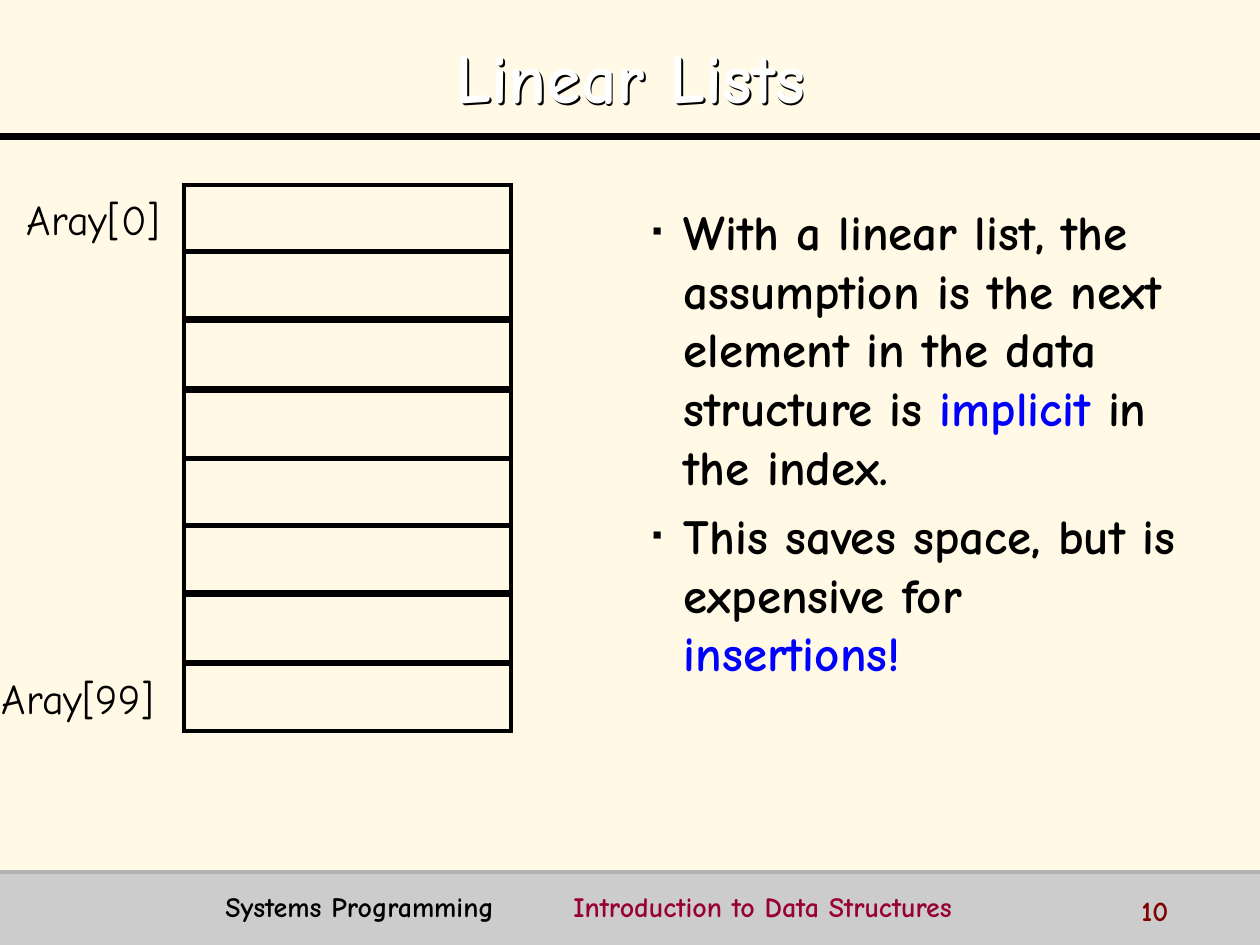
from lxml import etree
from pptx import Presentation
from pptx.dml.color import RGBColor as RGB
from pptx.enum.shapes import MSO_CONNECTOR as CONN, MSO_SHAPE as SHAPE
from pptx.enum.text import MSO_ANCHOR as ANCHOR, PP_ALIGN as ALIGN
from pptx.oxml import parse_xml
from pptx.oxml.ns import nsdecls, qn
from pptx.util import Pt

PX = 914400 / 126
FONT = "Comic Neue"
C = {"bg": "FFF9E6", "bar": "CCCCCC", "edge": "B2B2B2", "black": "000000",
     "white": "FFFFFF", "blue": "0000FF", "topic": "990033", "page": "800000"}


def px(*values):
    return [round(v * PX) for v in values]


def add_text(box, paragraphs, size, frame={}, para={}, bold=True):
    sp = s.shapes.add_textbox(*px(*box))
    tf = sp.text_frame
    for key, value in {"word_wrap": True, **frame}.items():
        setattr(tf, key, value)
    for i, runs in enumerate(paragraphs):
        p = tf.add_paragraph() if i else tf.paragraphs[0]
        for key, value in para.items():
            setattr(p, key, value)
        for text, color in runs:
            r = p.add_run()
            r.text = text
            for key, value in {"name": FONT, "size": Pt(size), "bold": bold}.items():
                setattr(r.font, key, value)
            r.font.color.rgb = RGB.from_string(C[color])
    return sp


prs = Presentation()
prs.slide_width, prs.slide_height = px(1260, 945)
s = prs.slides.add_slide(prs.slide_layouts[6])
s.background.fill.solid()
s.background.fill.fore_color.rgb = RGB.from_string(C["bg"])

bar = s.shapes.add_shape(SHAPE.RECTANGLE, *px(0, 872, 1260, 73))
bar.shadow.inherit = False
bar.fill.solid()
bar.fill.fore_color.rgb = RGB.from_string(C["bar"])
bar.line.fill.background()

for y, color, width in [(137, "black", 4), (872, "edge", 2)]:
    rule = s.shapes.add_connector(CONN.STRAIGHT, *px(0, y, 1260, y))
    rule.line.color.rgb = RGB.from_string(C[color])
    rule.line.width = Pt(width)
    etree.SubElement(rule._element.spPr, qn("a:effectLst"))

title = add_text((25, 16, 1211, 110), [[("Linear Lists", "white")]], 40,
                 {"vertical_anchor": ANCHOR.MIDDLE},
                 {"alignment": ALIGN.CENTER, "line_spacing": 1.1})
title._element.spPr.append(parse_xml(
    f'<a:effectLst {nsdecls("a")}><a:outerShdw dist="20320" dir="2700000" algn="tl">'
    f'<a:srgbClr val="{C["black"]}"/></a:outerShdw></a:effectLst>'))

tf = add_text((640, 195, 557, 662), [
    [("With a linear list, the assumption is the next element in the data structure is ", "black"),
     ("implicit ", "blue"), ("in the index.", "black")],
    [("This saves space, but is expensive for ", "black"), ("insertions!", "blue")]], 28).text_frame
tf.paragraphs[1].space_before = Pt(5.6)
bullet = {"buClr": {}, "buSzPct": {"val": "50000"},
          "buFont": {"typeface": FONT}, "buChar": {"char": "▪"}}
for p in tf.paragraphs:
    pPr = p._p.get_or_add_pPr()
    pPr.set("marL", "228600")
    pPr.set("indent", "-228600")
    for tag, attrs in bullet.items():
        etree.SubElement(pPr, qn(f"a:{tag}"), attrs)
    etree.SubElement(pPr.find(qn("a:buClr")), qn("a:srgbClr"), {"val": C["black"]})

tops = [185, 251, 321, 391, 459, 525, 595, 664]
for y in tops:
    cell = s.shapes.add_shape(SHAPE.RECTANGLE, *px(184, y, 327, 67))
    cell.shadow.inherit = False
    cell.fill.background()
    cell.line.color.rgb = RGB.from_string(C["black"])
    cell.line.width = Pt(2)
    etree.SubElement(cell._element.spPr.find(qn("a:ln")), qn("a:miter"), {"lim": "800000"})

for label, y, width in [("Aray[0]", tops[0], 160), ("Aray[99]", tops[-1], 154)]:
    add_text((0, y, width, 67), [[(label, "black")]], 24,
             {"vertical_anchor": ANCHOR.MIDDLE, "word_wrap": False,
              "margin_left": 0, "margin_right": 0},
             {"alignment": ALIGN.RIGHT}, False)

tf = add_text((213, 883, 922, 55), [[("Systems Programming\t", "black"),
                                     ("Introduction to Data Structures", "topic")]], 16).text_frame
tabs = etree.SubElement(tf.paragraphs[0]._p.get_or_add_pPr(), qn("a:tabLst"))
etree.SubElement(tabs, qn("a:tab"), {"pos": str(px(348)[0]), "algn": "l"})
add_text((1129, 887, 126, 32), [[("10", "page")]], 16)

prs.save("out.pptx")
